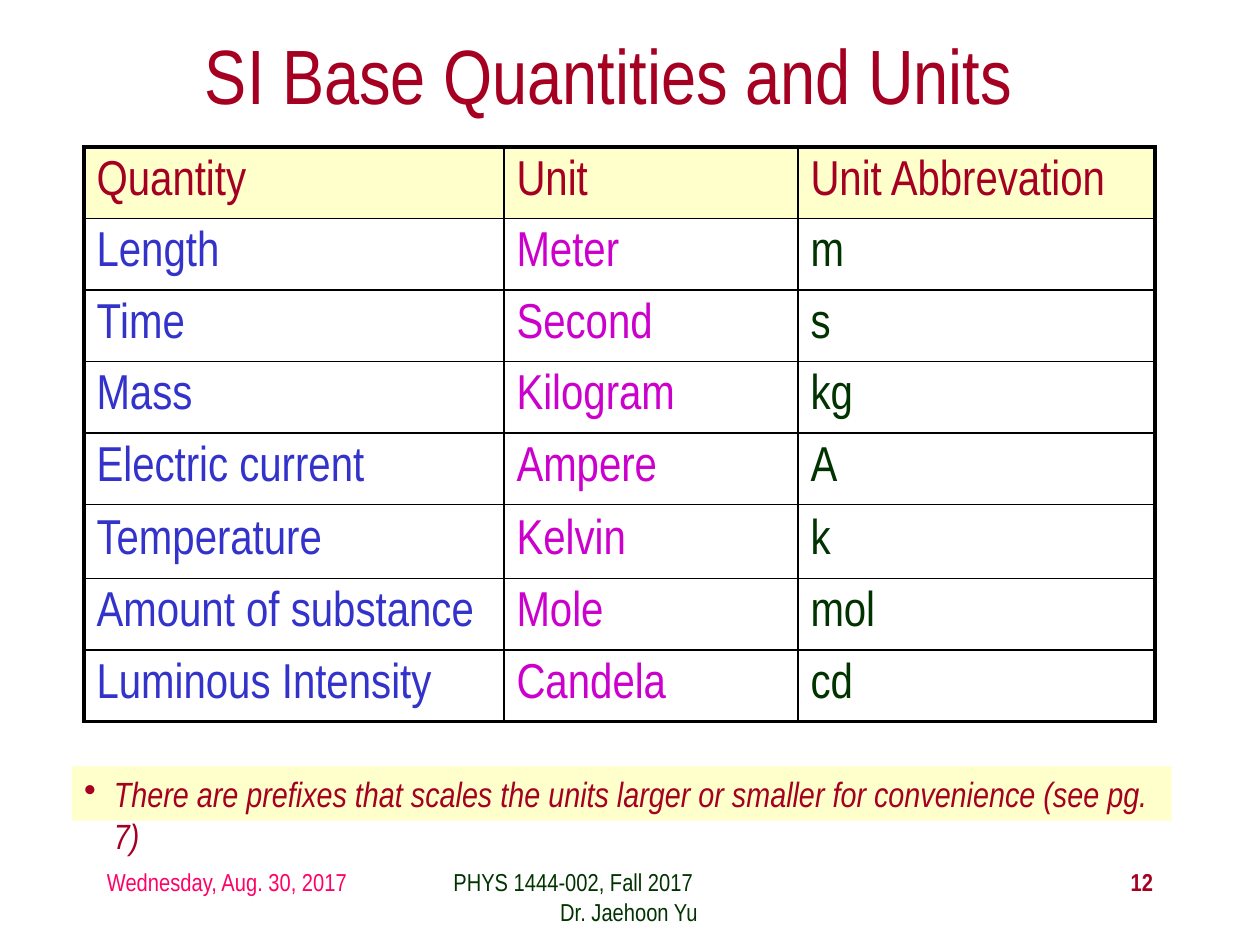
from lxml.etree import SubElement
from pptx import Presentation
from pptx.dml.color import RGBColor as RGB
from pptx.enum.shapes import MSO_SHAPE as Shape
from pptx.enum.text import MSO_ANCHOR as Anchor, PP_ALIGN as Align
from pptx.oxml.ns import qn
from pptx.util import Pt

COLORS = {
    "crimson": "A50021", "blue": "3333CC", "magenta": "CC00CC", "green": "003300",
    "pink": "FF0066", "cream": "FFFFCC", "black": "000000", "white": "FFFFFF",
}
HEADER = ("Quantity", "Unit", "Unit Abbrevation")
UNITS = [
    ("Length", "Meter", "m"),
    ("Time", "Second", "s"),
    ("Mass", "Kilogram", "kg"),
    ("Electric current", "Ampere", "A"),
    ("Temperature", "Kelvin", "k"),
    ("Amount of substance", "Mole", "mol"),
    ("Luminous Intensity", "Candela", "cd"),
]
COLUMN_COLORS = ("blue", "magenta", "green")
COLUMN_WIDTHS = (240, 168, 204)
ROW_HEIGHTS = [40.8] * 5 + [42.3] + [40.8] * 2
OUTER_LINE, INNER_LINE = 2.25, 1


class SlideBuilder:
    font_name = "Arial Narrow"

    def __init__(self, slide):
        self.slide = slide

    def color(self, name):
        return RGB.from_string(COLORS[name])

    def fill(self, target, name):
        target.fill.solid()
        target.fill.fore_color.rgb = self.color(name)

    def run(self, paragraph, words, size, color, bold=False, italic=False):
        run = paragraph.add_run()
        run.text = words
        font = run.font
        font.name, font.size, font.bold, font.italic = self.font_name, Pt(size), bold, italic
        font.color.rgb = self.color(color)

    def hang(self, paragraph, margin, indent):
        """Set the left margin and the first-line indent, in points."""
        properties = paragraph._p.get_or_add_pPr()
        properties.set("marL", str(Pt(margin)))
        properties.set("indent", str(Pt(indent)))
        return properties

    def text(self, box, words, size, color, align=Align.LEFT, anchor=Anchor.TOP, bold=False):
        frame = self.slide.shapes.add_textbox(*map(Pt, box)).text_frame
        frame.word_wrap = True
        frame.vertical_anchor = anchor
        paragraph = frame.paragraphs[0]
        paragraph.alignment = align
        for number, line in enumerate(words.split("\n")):
            if number:
                paragraph.add_line_break()
            self.run(paragraph, line, size, color, bold)
        return paragraph

    def bullet_note(self, box, words):
        note = self.slide.shapes.add_shape(Shape.RECTANGLE, *map(Pt, box))
        note.shadow.inherit = False
        self.fill(note, "cream")
        note.line.fill.background()
        note.text_frame.word_wrap = True
        note.text_frame.vertical_anchor = Anchor.TOP
        paragraph = note.text_frame.paragraphs[0]
        paragraph.alignment = Align.LEFT
        SubElement(self.hang(paragraph, 17, -17), qn("a:buChar"), char="•")
        self.run(paragraph, words, 20, "crimson", italic=True)

    def cell_borders(self, cell, widths):
        properties = cell._tc.get_or_add_tcPr()
        for position, (side, width) in enumerate(widths.items()):
            line = properties.makeelement(qn(f"a:{side}"), {"w": str(Pt(width))})
            solid = SubElement(line, qn("a:solidFill"))
            SubElement(solid, qn("a:srgbClr"), val=COLORS["black"])
            properties.insert(position, line)

    def table(self, left, top, rows):
        last_row, last_column = len(rows) - 1, len(COLUMN_WIDTHS) - 1
        table = self.slide.shapes.add_table(
            len(rows), len(COLUMN_WIDTHS), Pt(left), Pt(top),
            Pt(sum(COLUMN_WIDTHS)), Pt(sum(ROW_HEIGHTS))).table
        for column, width in zip(table.columns, COLUMN_WIDTHS):
            column.width = Pt(width)
        for row, height in zip(table.rows, ROW_HEIGHTS):
            row.height = Pt(height)
        for r, row in enumerate(rows):
            for c, words in enumerate(row):
                cell = table.cell(r, c)
                cell.vertical_anchor = Anchor.MIDDLE
                self.fill(cell, "white" if r else "cream")
                self.run(cell.text_frame.paragraphs[0], words, 28,
                         COLUMN_COLORS[c] if r else "crimson")
                outer = {"lnL": c == 0, "lnR": c == last_column,
                         "lnT": r == 0, "lnB": r == last_row}
                self.cell_borders(cell, {side: OUTER_LINE if edge else INNER_LINE
                                         for side, edge in outer.items()})


def main():
    deck = Presentation()
    deck.slide_width, deck.slide_height = Pt(720), Pt(540)
    builder = SlideBuilder(deck.slides.add_slide(deck.slide_layouts[6]))

    builder.text((54, 492, 168, 36), "Wednesday, Aug. 30, 2017", 14, "pink")
    course = builder.text((246, 492, 228, 36),
                          "PHYS 1444-002, Fall 2017\nDr. Jaehoon Yu", 14, "green")
    builder.hang(course, 67, -61)
    builder.text((516, 492, 150, 36), "12", 14, "crimson", Align.RIGHT, bold=True)
    builder.text((30, 12, 636, 60), "SI Base Quantities and Units", 44, "crimson",
                 Align.CENTER, Anchor.MIDDLE)
    builder.bullet_note(
        (41, 438, 628.5, 31),
        "There are prefixes that scales the units larger or smaller for convenience (see pg. 7)")
    builder.table(48, 84, [HEADER, *UNITS])
    deck.save("out.pptx")


if __name__ == "__main__":
    main()
